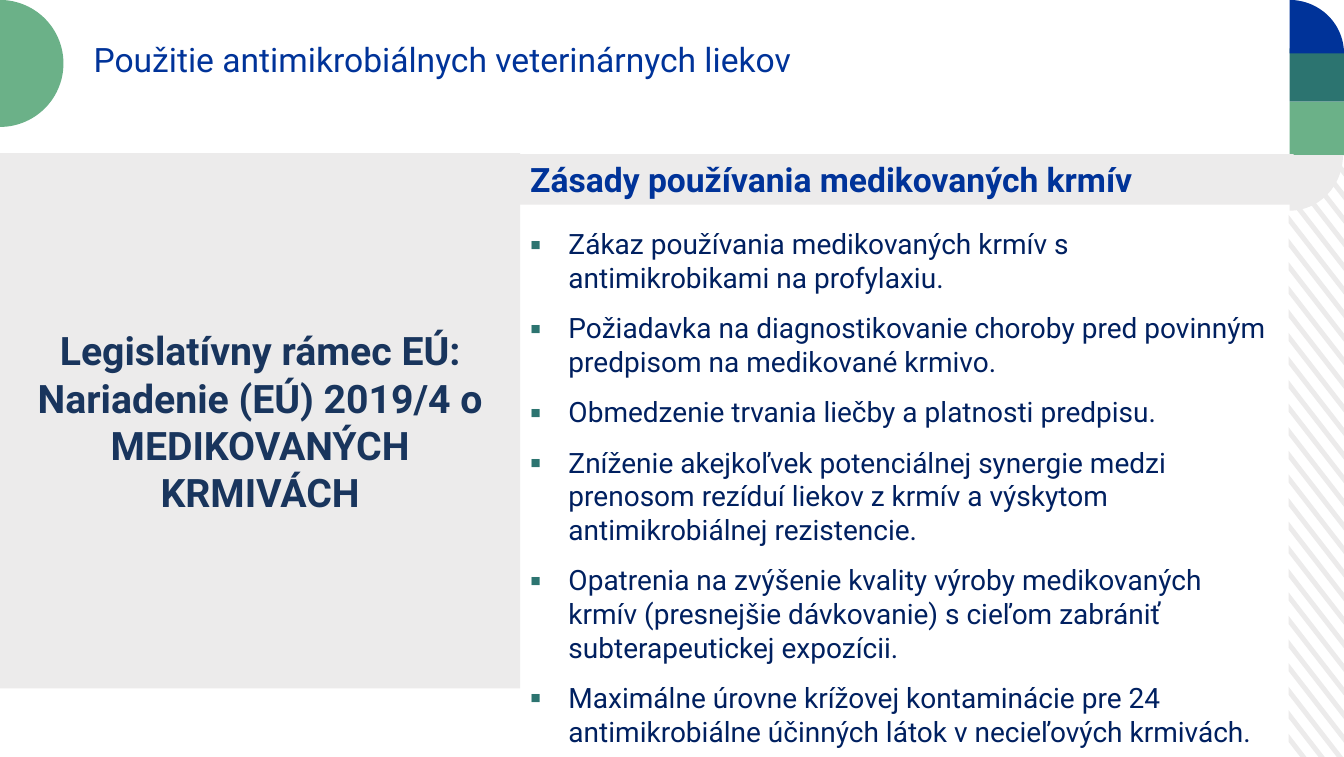
import math
import pptx
import pptx.dml.color
import pptx.enum.shapes
import pptx.enum.text
import pptx.oxml.ns
import pptx.util
from lxml import etree

Inches, Pt = pptx.util.Inches, pptx.util.Pt
MSO = pptx.enum.shapes.MSO_SHAPE
ALIGN = pptx.enum.text.PP_ALIGN
ANCHOR = pptx.enum.text.MSO_ANCHOR

# Content
TITLE = "Použitie antimikrobiálnych veterinárnych liekov"
HEADING = "Zásady používania medikovaných krmív"
FRAMEWORK = "Legislatívny rámec EÚ: Nariadenie (EÚ) 2019/4 o MEDIKOVANÝCH KRMIVÁCH"
PRINCIPLES = [
    "Zákaz používania medikovaných krmív s antimikrobikami na profylaxiu.",
    "Požiadavka na diagnostikovanie choroby pred povinným predpisom na medikované krmivo.",
    "Obmedzenie trvania liečby a platnosti predpisu.",
    "Zníženie akejkoľvek potenciálnej synergie medzi prenosom rezíduí liekov z krmív "
    "a výskytom antimikrobiálnej rezistencie.",
    "Opatrenia na zvýšenie kvality výroby medikovaných krmív (presnejšie dávkovanie) "
    "s cieľom zabrániť subterapeutickej expozícii.",
    "Maximálne úrovne krížovej kontaminácie pre 24 antimikrobiálne účinných látok "
    "v necieľových krmivách.",
]

THEME = {
    "font": "Roboto",
    "blue": "003399", "navy": "19355D", "text": "002060",
    "teal": "2C7470", "green": "6BB188", "grey": "ECEBEB",
    "title": 24, "framework": 28, "body": 20,
}

# Layout in inches
WIDTH, HEIGHT = 13.33, 7.51
BAND_LEFT, BAND_TOP = 12.78, 1.54
BLOCK_LEFT, BLOCK_W, BLOCK_H = 12.79, 0.54, 0.53
SPLIT = 5.16
STRIPES, STRIPE_PITCH, STRIPE_H, STRIPE_DROP = 28, 0.234, 0.08, 0.71
FIRST_STRIPE = 7.28

prs = pptx.Presentation()
prs.slide_width, prs.slide_height = Inches(WIDTH), Inches(HEIGHT)
s = prs.slides.add_slide(prs.slide_layouts[6])


def paint(sp, color):
    sp.shadow.inherit = False
    sp.fill.solid()
    sp.fill.fore_color.rgb = pptx.dml.color.RGBColor.from_string(THEME[color])
    sp.line.fill.background()


def outline(contours, color):
    builder = None
    for contour in contours:
        points = [(Inches(x), Inches(y)) for x, y in contour]
        if builder is None:
            builder = s.shapes.build_freeform(*points[0], scale=1.0)
        else:
            builder.move_to(*points[0])
        builder.add_line_segments(points[1:], close=True)
    paint(builder.convert_to_shape(), color)


def sector(cx, cy, rx, ry, start, end, color):
    angles = [math.radians(a) for a in range(start, end + 1, 3)]
    arc = [(cx + rx * math.cos(a), cy + ry * math.sin(a)) for a in angles]
    outline([[(cx, cy)] + arc], color)


def box(shape, left, top, width, height, color):
    sp = s.shapes.add_shape(shape, Inches(left), Inches(top), Inches(width), Inches(height))
    paint(sp, color)
    return sp


def text_box(left, top, width, height):
    return s.shapes.add_textbox(Inches(left), Inches(top), Inches(width), Inches(height))


def write(p, text, size, color, bold=False, align=ALIGN.LEFT):
    p.alignment = align
    r = p.add_run()
    r.text = text
    r.font.name, r.font.size, r.font.bold = THEME["font"], Pt(THEME[size]), bold
    r.font.color.rgb = pptx.dml.color.RGBColor.from_string(THEME[color])


def add_bullet(p):
    pPr = p._p.get_or_add_pPr()
    pPr.set("marL", str(Inches(0.38)))
    pPr.set("indent", str(-Inches(0.38)))
    qn = pptx.oxml.ns.qn
    color = etree.SubElement(pPr, qn("a:buClr"))
    etree.SubElement(color, qn("a:srgbClr")).set("val", THEME["teal"])
    etree.SubElement(pPr, qn("a:buFont")).set("typeface", THEME["font"])
    etree.SubElement(pPr, qn("a:buChar")).set("char", "▪")


def clip(points, limit, sign):
    """Keep the part of a polygon where sign * (y - limit) is not negative."""
    kept = []
    for (x0, y0), (x1, y1) in zip(points, points[1:] + points[:1]):
        d0, d1 = sign * (y0 - limit), sign * (y1 - limit)
        if d0 >= 0:
            kept.append((x0, y0))
        if d0 * d1 < 0:
            t = d0 / (d0 - d1)
            kept.append((x0 + t * (x1 - x0), limit))
    return kept


# Diagonal stripes, cut at the top and bottom of the band
stripes = []
for i in range(STRIPES):
    y = FIRST_STRIPE - i * STRIPE_PITCH
    stripe = [(BAND_LEFT, y), (WIDTH, y + STRIPE_DROP),
              (WIDTH, y + STRIPE_DROP + STRIPE_H), (BAND_LEFT, y + STRIPE_H)]
    stripes.append(clip(clip(stripe, BAND_TOP, 1), HEIGHT, -1))
outline(stripes, "grey")

# Corner blocks and rounded ends
for top, color in ((0.48, "teal"), (1.01, "green")):
    box(MSO.RECTANGLE, BLOCK_LEFT, top, BLOCK_W, BLOCK_H, color)
sector(BLOCK_LEFT, BLOCK_H, BLOCK_W, BLOCK_H, 270, 360, "blue")
sector(BLOCK_LEFT, BAND_TOP, 0.53, 0.55, 0, 90, "grey")
sector(0, 0.63, 0.63, 0.63, -90, 90, "green")

# Title
tf = text_box(0.83, 0.34, 8.76, 0.58).text_frame
tf.word_wrap = True
write(tf.paragraphs[0], TITLE, "title", "blue")

# Heading bar
tf = box(MSO.RECTANGLE, SPLIT, 1.53, 7.67, 0.5, "grey").text_frame
tf.word_wrap = True
tf.vertical_anchor = ANCHOR.TOP
write(tf.paragraphs[0], HEADING, "title", "blue", True)

# Legal framework panel
tf = box(MSO.RECTANGLE, 0, 1.52, SPLIT, 5.31, "grey").text_frame
tf.word_wrap = True
tf.vertical_anchor = ANCHOR.MIDDLE
write(tf.paragraphs[0], FRAMEWORK, "framework", "navy", True, ALIGN.CENTER)

# Principles
tf = text_box(SPLIT, 2.2, 7.59, 5.26).text_frame
tf.word_wrap = True
for i, principle in enumerate(PRINCIPLES):
    p = tf.add_paragraph() if i else tf.paragraphs[0]
    add_bullet(p)
    p.space_before, p.space_after = Pt(6 if i else 0), Pt(6)
    write(p, principle, "body", "text")

prs.save("out.pptx")
